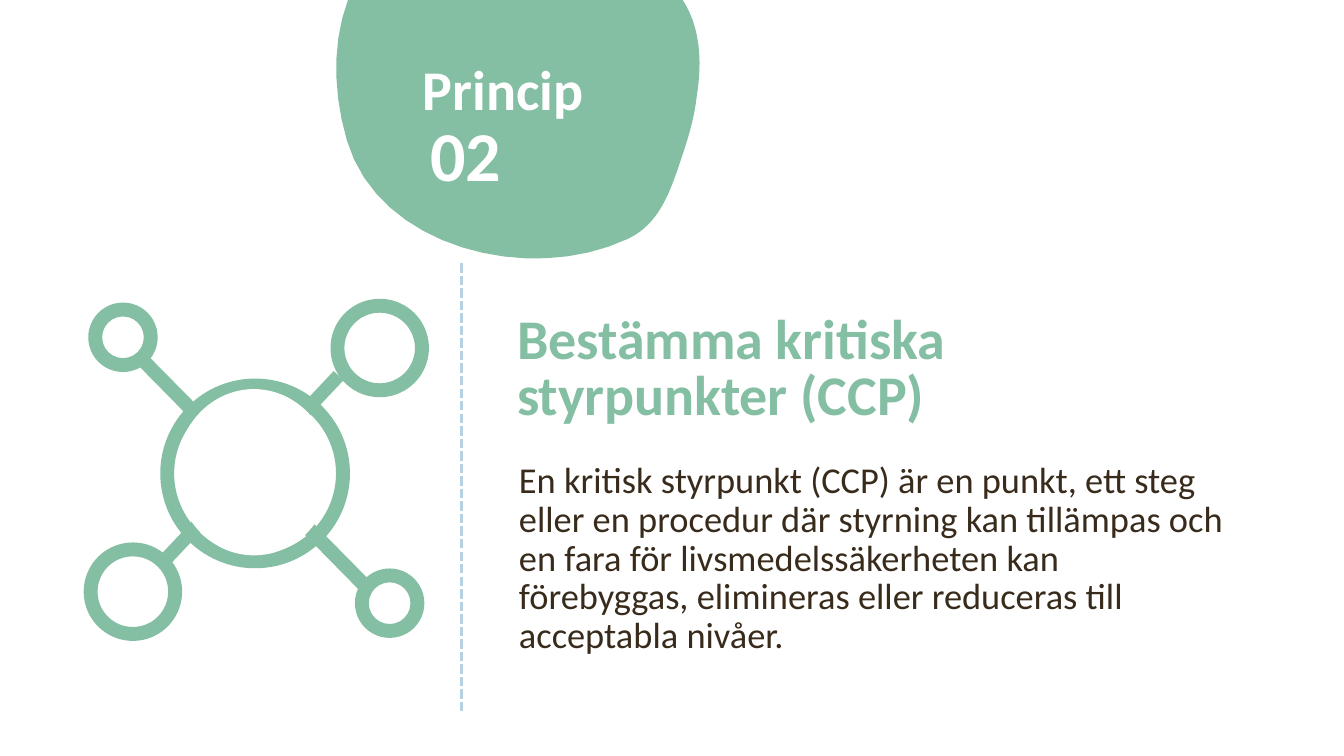
from lxml import etree
from pptx import Presentation
from pptx import util as u
from pptx.dml.color import RGBColor
from pptx.enum import dml, shapes, text
from pptx.oxml import ns

COLORS = {"green": "84BFA4", "brown": "382B1B", "white": "FFFFFF", "blue": "B6D1E1"}
RING_WIDTH = 0.35
RINGS = [
    (9.82, 15.2, 1.75),
    (3.35, 14.91, 2.48),
    (6.43, 11.93, 4.78),
    (3.1, 8.5, 1.75),
    (9.57, 8.77, 2.48),
]
SPOKES = [
    [(3.35, 9.07), (3.58, 8.81), (9.47, 14.78), (9.22, 15.04)],
    [(8.41, 9.35), (8.66, 9.58), (4.14, 14.38), (3.89, 14.15)],
]
BLOB_START = (17.55, 2.49)
BLOB_CURVES = [
    [(17.75, 1.27), (17.63, 0.05), (16.46, -0.76)],
    [(15.32, -1.52), (13.56, -2.21), (12.17, -2.21)],
    [(8.97, -2.26), (7.92, 0.74), (8.74, 3.53)],
    [(9.53, 6.25), (13.34, 7.19), (15.82, 6.02)],
    [(16.59, 5.66), (16.87, 4.88), (17.12, 4.14)],
    [(17.3, 3.61), (17.48, 3.07), BLOB_START],
]


def rgb(name):
    return RGBColor.from_string(COLORS[name])


def paint(sp, color):
    sp.shadow.inherit = False
    sp.fill.solid()
    sp.fill.fore_color.rgb = rgb(color)
    sp.line.fill.background()


def add_outline(s, points, color):
    corners = [(u.Cm(x), u.Cm(y)) for x, y in points]
    builder = s.shapes.build_freeform(*corners[0], scale=1.0)
    builder.add_line_segments(corners[1:], close=True)
    paint(builder.convert_to_shape(), color)


def curve_points(start, curves, steps=16):
    points = [start]
    for b, c, d in curves:
        a = points[-1]
        for i in range(1, steps + 1):
            t = i / steps
            weights = ((1 - t) ** 3, 3 * t * (1 - t) ** 2, 3 * t * t * (1 - t), t ** 3)
            points.append(tuple(
                sum(w * v for w, v in zip(weights, axis)) for axis in zip(a, b, c, d)
            ))
    return points[:-1]


def add_round(s, kind, cx, cy, width, height, color):
    sp = s.shapes.add_shape(
        kind, u.Cm(cx - width / 2), u.Cm(cy - height / 2), u.Cm(width), u.Cm(height)
    )
    paint(sp, color)
    return sp


def add_ring(s, cx, cy, size):
    sp = add_round(s, shapes.MSO_SHAPE.DONUT, cx, cy, size, size, "green")
    sp.adjustments[0] = RING_WIDTH / size


def add_text(s, box, words, size, color, spacing, bold=False):
    tf = s.shapes.add_textbox(*map(u.Cm, box)).text_frame
    tf.word_wrap = True
    tf.vertical_anchor = text.MSO_ANCHOR.TOP
    p = tf.paragraphs[0]
    p.line_spacing = spacing
    r = p.add_run()
    r.text = words
    for name, value in {"name": "Calibri", "size": u.Pt(size), "bold": bold}.items():
        setattr(r.font, name, value)
    r.font.color.rgb = rgb(color)


def add_divider(s, x, top, bottom):
    line = s.shapes.add_connector(
        shapes.MSO_CONNECTOR.STRAIGHT, u.Cm(x), u.Cm(top), u.Cm(x), u.Cm(bottom)
    )
    line.line.color.rgb = rgb("blue")
    for name, value in {
        "width": u.Pt(2.25), "dash_style": dml.MSO_LINE.SQUARE_DOT,
    }.items():
        setattr(line.line, name, value)
    etree.SubElement(line._element.spPr, ns.qn("a:effectLst"))


def main():
    prs = Presentation()
    prs.slide_width, prs.slide_height = u.Cm(33.87), u.Cm(19.05)
    s = prs.slides.add_slide(prs.slide_layouts[6])

    add_text(s, (12.78, 7.8, 15.93, 4.75), "Bestämma kritiska styrpunkter (CCP)",
             40, "green", u.Pt(40.2), bold=True)
    add_text(s, (12.83, 11.53, 18.52, 5.56),
             "En kritisk styrpunkt (CCP) är en punkt, ett steg eller en procedur där "
             "styrning kan tillämpas och en fara för livsmedelssäkerheten kan "
             "förebyggas, elimineras eller reduceras till acceptabla nivåer.",
             26, "brown", u.Pt(27.6))

    for spoke in SPOKES:
        add_outline(s, spoke, "green")
    for ring in RINGS:
        add_ring(s, *ring)
    add_round(s, shapes.MSO_SHAPE.OVAL, 6.4, 11.9, 3.91, 4.19, "white")

    add_outline(s, curve_points(BLOB_START, BLOB_CURVES), "green")
    add_text(s, (10.59, 2.92, 3.2, 2.39), "02", 50, "white", 0.9, bold=True)
    add_text(s, (10.41, 1.57, 5.74, 1.7), "Princip", 40, "white", 0.8, bold=True)
    add_divider(s, 11.63, 6.63, 17.96)
    prs.save("out.pptx")


if __name__ == "__main__":
    main()
